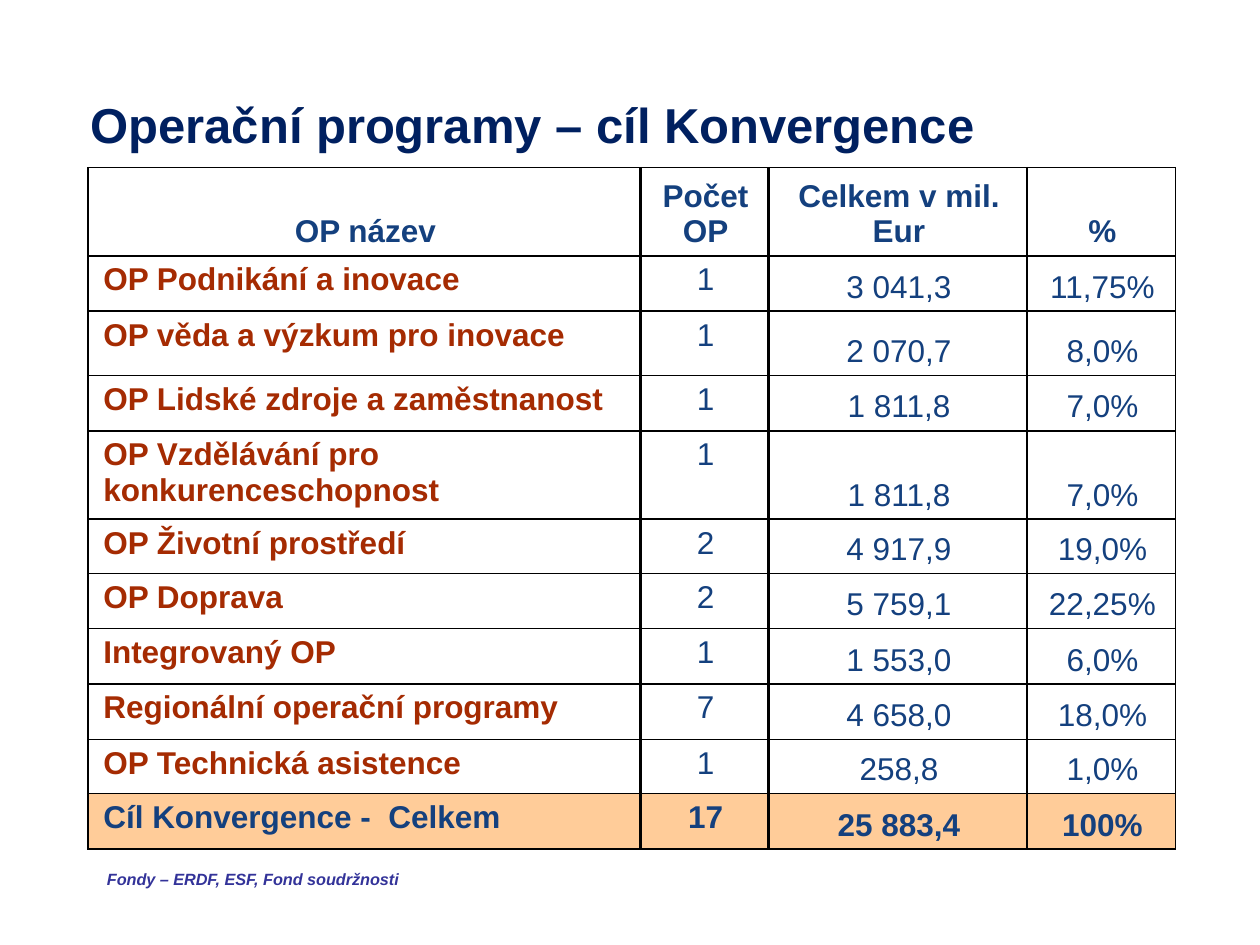
from lxml.etree import SubElement
from pptx import Presentation
from pptx.dml.color import RGBColor
from pptx.enum.text import MSO_ANCHOR, MSO_AUTO_SIZE, PP_ALIGN
from pptx.oxml.ns import qn
from pptx.util import Inches, Pt

NAVY = RGBColor(0x00, 0x20, 0x60)
BLUE = RGBColor(0x14, 0x40, 0x7E)
RUST = RGBColor(0xA5, 0x2B, 0x02)
INDIGO = RGBColor(0x33, 0x33, 0x99)
PEACH = RGBColor(0xFF, 0xCC, 0x99)

COLUMNS = [4.38, 1.02, 2.05, 1.18]
HEIGHTS = [0.68, 0.44, 0.51, 0.44, 0.66, 0.43, 0.44, 0.44, 0.44, 0.43, 0.44]
BORDERS = [(1, 2), (2, 2), (2, 1), (1, 1)]
ROWS = [
    ("OP název", "Počet OP", "Celkem v mil. Eur", "%"),
    ("OP Podnikání a inovace", "1", "3 041,3", "11,75%"),
    ("OP věda a výzkum pro inovace", "1", "2 070,7", "8,0%"),
    ("OP Lidské zdroje a zaměstnanost", "1", "1 811,8", "7,0%"),
    ("OP Vzdělávání pro konkurenceschopnost", "1", "1 811,8", "7,0%"),
    ("OP Životní prostředí", "2", "4 917,9", "19,0%"),
    ("OP Doprava", "2", "5 759,1", "22,25%"),
    ("Integrovaný OP", "1", "1 553,0", "6,0%"),
    ("Regionální operační programy", "7", "4 658,0", "18,0%"),
    ("OP Technická asistence", "1", "258,8", "1,0%"),
    ("Cíl Konvergence -  Celkem", "17", "25 883,4", "100%"),
]


def set_font(p, size, color, bold):
    """Set the Arial font of a paragraph."""
    p.font.name = "Arial"
    p.font.size = Pt(size)
    p.font.color.rgb = color
    p.font.bold = bold


def set_borders(cell, left, right):
    """Draw black cell borders, with the side widths in points."""
    tcPr = cell._tc.get_or_add_tcPr()
    for side, width in zip("LRTB", (left, right, 1, 1)):
        ln = SubElement(tcPr, qn(f"a:ln{side}"), w=str(Pt(width)))
        fill = SubElement(ln, qn("a:solidFill"))
        SubElement(fill, qn("a:srgbClr"), val="000000")


def add_text(s, text, x, y, w, h, size, color):
    """Add a bold one-line text box and return its shape."""
    box = s.shapes.add_textbox(Inches(x), Inches(y), Inches(w), Inches(h))
    p = box.text_frame.paragraphs[0]
    p.text = text
    set_font(p, size, color, True)
    return box


def add_title(s, x, y, w, h):
    """Add the slide title, centred vertically in its box."""
    tf = add_text(s, "Operační programy – cíl Konvergence", x, y, w, h, 28, NAVY).text_frame
    tf.word_wrap = True
    tf.vertical_anchor = MSO_ANCHOR.MIDDLE


def fill_cell(cell, text, row, col):
    """Write and style one cell by its place in the table."""
    header, total = row == 0, row == len(ROWS) - 1
    p = cell.text_frame.paragraphs[0]
    p.text = text
    p._p.get_or_add_pPr().set("marL", str(Inches(0.02)))
    p.alignment = PP_ALIGN.CENTER if header or col else PP_ALIGN.LEFT
    name = col == 0 and not header and not total
    set_font(p, 18, RUST if name else BLUE, header or total or col == 0)
    cell.vertical_anchor = MSO_ANCHOR.BOTTOM if header or col > 1 else MSO_ANCHOR.TOP
    set_borders(cell, *BORDERS[col])
    if total:
        cell.fill.solid()
        cell.fill.fore_color.rgb = PEACH
    else:
        cell.fill.background()


def add_programmes(s, x, y):
    """Add the table of operational programmes."""
    table = s.shapes.add_table(len(ROWS), len(COLUMNS), Inches(x), Inches(y),
                               Inches(sum(COLUMNS)), Inches(sum(HEIGHTS))).table
    table.first_row = table.horz_banding = False
    for column, width in zip(table.columns, COLUMNS):
        column.width = Inches(width)
    for i, (height, texts) in enumerate(zip(HEIGHTS, ROWS)):
        table.rows[i].height = Inches(height)
        for j, text in enumerate(texts):
            fill_cell(table.cell(i, j), text, i, j)


def add_footnote(s, x, y, w, h):
    """Add the raised italic note on the funds."""
    tf = add_text(s, "Fondy – ERDF, ESF, Fond soudržnosti", x, y, w, h, 16, INDIGO).text_frame
    tf.word_wrap = False
    tf.auto_size = MSO_AUTO_SIZE.SHAPE_TO_FIT_TEXT
    p = tf.paragraphs[0]
    p.font.italic = True
    p.runs[0]._r.get_or_add_rPr().set("baseline", "30000")


def main():
    """Build the slide and save it."""
    prs = Presentation()
    prs.slide_width, prs.slide_height = Inches(10), Inches(7.5)
    s = prs.slides.add_slide(prs.slide_layouts[6])
    add_title(s, 0.62, 0.55, 8.12, 0.86)
    add_programmes(s, 0.7, 1.33)
    add_footnote(s, 0.75, 6.82, 2.75, 0.37)
    prs.save("out.pptx")


if __name__ == "__main__":
    main()
